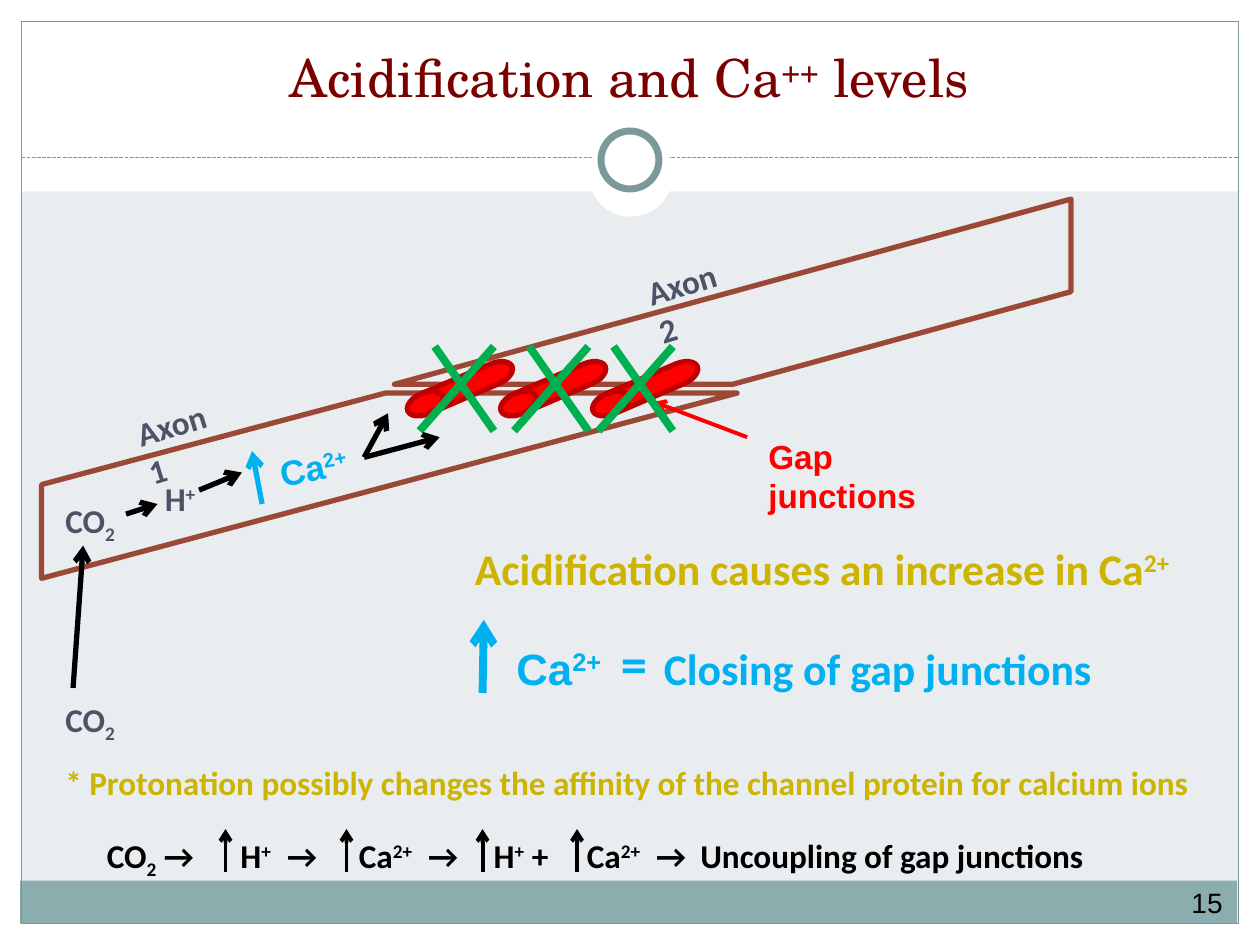
from lxml import etree
from pptx import Presentation
from pptx.dml.color import RGBColor
from pptx.enum.dml import MSO_LINE
from pptx.enum.shapes import MSO_CONNECTOR, MSO_SHAPE
from pptx.enum.text import MSO_ANCHOR, PP_ALIGN
from pptx.oxml.ns import qn
from pptx.util import Inches, Pt

RECTANGLE = MSO_SHAPE.RECTANGLE
OVAL = MSO_SHAPE.OVAL
STRIPE = MSO_SHAPE.DIAGONAL_STRIPE
DRUM = MSO_SHAPE.FLOWCHART_DIRECT_ACCESS_STORAGE
DRUM = MSO_SHAPE.FLOWCHART_MAGNETIC_DISK if DRUM is None else DRUM
STRAIGHT = MSO_CONNECTOR.STRAIGHT
SYSTEM_DASH = MSO_LINE.SQUARE_DOT
CENTER = PP_ALIGN.CENTER
MIDDLE = MSO_ANCHOR.MIDDLE
BOTTOM = MSO_ANCHOR.BOTTOM

BACKGROUND = RGBColor(0xE9, 0xED, 0xEF)
WHITE = RGBColor(0xFF, 0xFF, 0xFF)
BLACK = RGBColor(0x00, 0x00, 0x00)
BAND = RGBColor(0x8C, 0xAD, 0xAE)
FRAME = RGBColor(0x7C, 0x99, 0x9A)
MAROON = RGBColor(0x7A, 0x00, 0x00)
SLATE = RGBColor(0x4D, 0x53, 0x67)
BROWN = RGBColor(0x9B, 0x49, 0x36)
RED = RGBColor(0xFF, 0x00, 0x00)
DARK_RED = RGBColor(0xC0, 0x00, 0x00)
BLUE = RGBColor(0x00, 0xB0, 0xF0)
GREEN = RGBColor(0x00, 0xB0, 0x50)
GOLD = RGBColor(0xCC, 0xB4, 0x00)

SUPERSCRIPT = 30
SUBSCRIPT = -25
CALCIUM = [("Ca", 0), ("2+", SUPERSCRIPT)]
PROTON = [("H", 0), ("+", SUPERSCRIPT)]
CARBON_DIOXIDE = [("CO", 0), ("2", SUBSCRIPT)]


def add_figure(slide, kind, box, fill=None, line=None, width=1, rotation=0):
    shape = slide.shapes.add_shape(kind, *map(Inches, box))
    shape.shadow.inherit = False
    shape.rotation = rotation
    if fill is None:
        shape.fill.background()
    else:
        shape.fill.solid()
        shape.fill.fore_color.rgb = fill
    if line is None:
        shape.line.fill.background()
    else:
        shape.line.color.rgb = line
        shape.line.width = Pt(width)
    return shape


def add_line(slide, start, end, color, width, arrow=True):
    connector = slide.shapes.add_connector(STRAIGHT, *map(Inches, start + end))
    connector.line.color.rgb = color
    connector.line.width = Pt(width)
    if arrow:
        line = connector.line._get_or_add_ln()
        etree.SubElement(line, qn("a:tailEnd"), type="arrow")
    properties = connector._element.spPr
    etree.SubElement(properties, qn("a:effectLst"))
    return connector


def write_runs(paragraph, parts, size, color, font, bold):
    for text, baseline in parts:
        run = paragraph.add_run()
        run.text = text
        run.font.size = Pt(size)
        run.font.name = font
        run.font.bold = bold
        run.font.color.rgb = color
        if baseline:
            run._r.get_or_add_rPr().set("baseline", str(baseline * 1000))


def add_label(slide, box, parts, size, color, font="Calibri", bold=True,
              wrap=True, rotation=0):
    shape = slide.shapes.add_textbox(*map(Inches, box))
    shape.rotation = rotation
    shape.text_frame.word_wrap = wrap
    write_runs(shape.text_frame.paragraphs[0], parts, size, color, font, bold)
    return shape


def add_tab_stops(paragraph, positions):
    tab_list = etree.SubElement(paragraph._p.get_or_add_pPr(), qn("a:tabLst"))
    for position in positions:
        etree.SubElement(tab_list, qn("a:tab"), pos=str(Inches(position)), algn="l")


def add_backdrop(slide):
    slide.background.fill.solid()
    slide.background.fill.fore_color.rgb = BACKGROUND
    for box in [(0, 7.33, 10, 0.17), (0, 0, 10, 1.52),
                (0, 0, 0.17, 7.5), (9.83, 0, 0.17, 7.5)]:
        add_figure(slide, RECTANGLE, box, WHITE)
    add_figure(slide, RECTANGLE, (0.16, 6.99, 9.66, 0.34), BAND)
    add_figure(slide, RECTANGLE, (0.17, 0.17, 9.66, 7.16), line=FRAME, width=0.75)
    divider = add_line(slide, (0.17, 1.25), (9.83, 1.25), FRAME, 0.75, arrow=False)
    divider.line.dash_style = SYSTEM_DASH
    add_figure(slide, OVAL, (4.67, 1.05, 0.67, 0.67), WHITE)
    add_figure(slide, OVAL, (4.77, 1.04, 0.46, 0.46), WHITE, FRAME, 4)


def add_title(slide):
    title = slide.shapes.title
    title.left, title.top, title.width, title.height = map(
        Inches, (0.33, 0.33, 9.33, 0.58))
    title.text_frame.vertical_anchor = BOTTOM
    paragraph = title.text_frame.paragraphs[0]
    paragraph.alignment = CENTER
    parts = [("Acidification and Ca", 0), ("++", SUPERSCRIPT), (" levels", 0)]
    write_runs(paragraph, parts, 30, MAROON, "TeX Gyre Schola", False)
    title.element.getparent().append(title.element)


def add_page_number(slide):
    label = add_label(slide, (9.33, 6.92, 0.5, 0.48), [("15", 0)], 16, BLACK,
                      "Arial", bold=False)
    frame = label.text_frame
    frame.margin_left = frame.margin_right = Inches(0.05)
    frame.vertical_anchor = MIDDLE
    frame.paragraphs[0].alignment = CENTER


def add_axons(slide):
    lower = add_figure(slide, STRIPE, (0.33, 3.12, 5.52, 1.47), line=BROWN, width=3)
    lower.adjustments[0] = 0.494
    add_figure(slide, STRIPE, (3.13, 1.58, 5.37, 1.47), line=BROWN, width=3,
               rotation=180)
    for name, left, top in [("Axon 1", 0.97, 3.16), ("Axon 2", 5.02, 2.04)]:
        add_label(slide, (left, top, 0.8, 0.34), [(name, 0)], 19, SLATE, rotation=343)


def add_gap_junctions(slide):
    for left in (3.2, 3.94, 4.67):
        add_figure(slide, DRUM, (left, 3, 0.9, 0.17), RED, DARK_RED, 3, 156.8)
    add_line(slide, (5.93, 3.47), (5.19, 3.19), RED, 2.25)
    add_label(slide, (6, 3.41, 1.66, 0.34), [("Gap junctions", 0)], 19, RED, "Arial")
    for left in (3.33, 4.08, 4.75):
        add_line(slide, (left + 0.59, 2.75), (left, 3.42), GREEN, 4.5, arrow=False)
        add_line(slide, (left + 0.12, 2.75), (left + 0.59, 3.42), GREEN, 4.5,
                 arrow=False)


def add_pathway(slide):
    for start, end in [((0.58, 5.46), (0.66, 4.33)), ((1, 4.08), (1.25, 4)),
                       ((1.58, 3.89), (1.92, 3.75)), ((2.89, 3.63), (3.49, 3.47)),
                       ((2.89, 3.63), (3.08, 3.28))]:
        add_line(slide, start, end, BLACK, 3)
    for top in (3.92, 5.5):
        add_label(slide, (0.42, top, 0.61, 0.42), CARBON_DIOXIDE, 19, SLATE, wrap=False)
    add_label(slide, (1.21, 3.75, 0.46, 0.42), PROTON, 19, SLATE, wrap=False)
    add_line(slide, (2.08, 4), (2, 3.58), BLUE, 3)
    add_label(slide, (2.12, 3.49, 0.77, 0.44), CALCIUM, 20, BLUE, "Arial",
              wrap=False, rotation=348.6)


def add_conclusions(slide):
    add_label(slide, (3.67, 4.25, 5.92, 0.52),
              [("Acidification causes an increase in Ca", 0), ("2+", SUPERSCRIPT)],
              25, GOLD)
    add_line(slide, (3.83, 5.5), (3.84, 4.92), BLUE, 4.5)
    add_label(slide, (4, 5.04, 0.91, 0.52), CALCIUM, 25, BLUE, "Arial", wrap=False)
    add_label(slide, (4.83, 4.96, 0.5, 0.61), [("=", 0)], 30, BLUE)
    add_label(slide, (5.17, 5.04, 4, 0.52), [("Closing of gap junctions", 0)], 25, BLUE)
    add_label(slide, (0.42, 6, 9.33, 0.42),
              [("* Protonation possibly changes the affinity of the channel protein "
                "for calcium ions", 0)], 19, GOLD)


def add_summary(slide):
    parts = (CARBON_DIOXIDE + [(" →\t", 0)] + PROTON + [("\t→\t", 0)] + CALCIUM
             + [("\t→\t", 0)] + PROTON + [(" +\t", 0)] + CALCIUM
             + [("\t→\tUncoupling of gap junctions", 0)])
    label = add_label(slide, (0.75, 6.58, 8.75, 0.42), parts, 19, BLACK)
    add_tab_stops(label.text_frame.paragraphs[0],
                  (1.06, 1.43, 2, 2.55, 3.07, 3.81, 4.36, 4.71))
    for left in (1.79, 2.75, 3.83, 4.58):
        add_line(slide, (left, 6.92), (left, 6.58), BLACK, 2.25)


def main():
    presentation = Presentation()
    presentation.slide_width = Inches(10)
    presentation.slide_height = Inches(7.5)
    slide = presentation.slides.add_slide(presentation.slide_layouts[5])
    add_backdrop(slide)
    add_title(slide)
    add_page_number(slide)
    add_axons(slide)
    add_gap_junctions(slide)
    add_pathway(slide)
    add_conclusions(slide)
    add_summary(slide)
    presentation.save("out.pptx")


if __name__ == "__main__":
    main()
